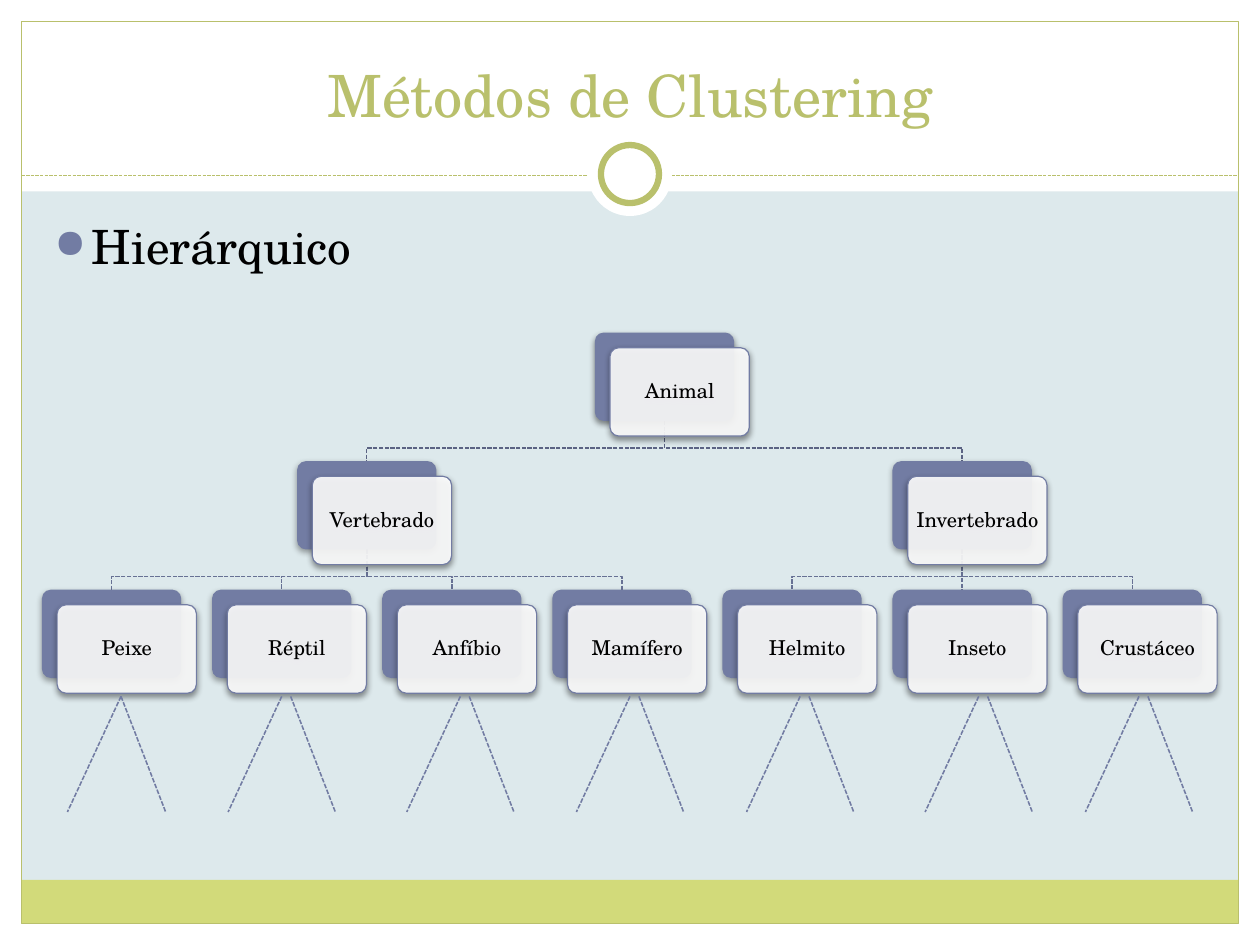
import lxml.etree
import pptx
import pptx.dml.color
import pptx.enum.dml
import pptx.enum.shapes
import pptx.enum.text
import pptx.oxml.ns
import pptx.util

Cm, Pt = pptx.util.Cm, pptx.util.Pt
SHAPE = pptx.enum.shapes.MSO_SHAPE
ALIGN = pptx.enum.text.PP_ALIGN
ANCHOR = pptx.enum.text.MSO_ANCHOR
qn = pptx.oxml.ns.qn

TITLE = "Métodos de Clustering"
TOPIC = "Hierárquico"
ROOT = "Animal"
# Each species: name, fan start (cm), gap between the two fan lines (cm)
BRANCHES = [
    ("Vertebrado", [("Peixe", 2.71, 0), ("Réptil", 6.31, 0.2),
                    ("Anfíbio", 10.31, 0.2), ("Mamífero", 14.11, 0.2)]),
    ("Invertebrado", [("Helmito", 17.92, 0.2), ("Inseto", 21.92, 0.2),
                      ("Crustáceo", 25.51, 0.2)]),
]

FONT = "TeX Gyre Schola"
WHITE, BLACK, BACKGROUND = "FFFFFF", "000000", "DDE9EC"
GREEN, LIME, PURPLE = "B9C06C", "D2DA7A", "727CA3"
LEVEL_LINES = ["5B6383", "677194"]

# Lengths in cm
WIDTH, HEIGHT, MARGIN = 28.22, 21.17, 0.48
CENTER_X, RING_Y, RULE_Y = WIDTH / 2, 3.9, 3.94
CARD_WIDTH, CARD_HEIGHT, CARD_SHIFT = 3.12, 1.98, 0.34
CARD_LEFT, COLUMN_STEP = 0.94, 3.81
TREE_TOP, LEVEL_STEP, ELBOW_RISE = 7.45, 2.88, 0.29
FAN_TOP, FAN_BOTTOM, FAN_LEFT, FAN_RIGHT = 15.6, 18.19, 1.2, 1.0

FRAME = [  # left, top, width, height, fill
    (0, HEIGHT - MARGIN, WIDTH, MARGIN, WHITE),
    (0, 0, WIDTH, 4.29, WHITE),
    (0, 0, MARGIN, HEIGHT, WHITE),
    (WIDTH - MARGIN, 0, MARGIN, HEIGHT, WHITE),
    (MARGIN, 19.71, WIDTH - 2 * MARGIN, 0.97, LIME),
]


def color(hex_code):
    return pptx.dml.color.RGBColor.from_string(hex_code)


def style_line(line, hex_code, width, dashed=False):
    line.color.rgb = color(hex_code)
    line.width = Pt(width)
    if dashed:
        line.dash_style = pptx.enum.dml.MSO_LINE.SQUARE_DOT


def add_shape(slide, kind, box, fill=None, line=None, line_width=0.75):
    shape = slide.shapes.add_shape(kind, *map(Cm, box))
    shape.shadow.inherit = False
    if fill:
        shape.fill.solid()
        shape.fill.fore_color.rgb = color(fill)
    else:
        shape.fill.background()
    if line:
        style_line(shape.line, line, line_width)
    else:
        shape.line.fill.background()
    return shape


def add_circle(slide, diameter, **style):
    """Circle centred on the ring point of the header."""
    box = (CENTER_X - diameter / 2, RING_Y - diameter / 2, diameter, diameter)
    return add_shape(slide, SHAPE.OVAL, box, WHITE, **style)


def add_dashed_line(slide, start, end, hex_code, width=1):
    connector = slide.shapes.add_connector(
        pptx.enum.shapes.MSO_CONNECTOR.STRAIGHT, *map(Cm, start + end))
    style_line(connector.line, hex_code, width, dashed=True)
    lxml.etree.SubElement(connector.element.spPr, qn("a:effectLst"))


def add_branch(slide, parent, child, hex_code):
    """Dashed elbow from the parent card down to the child card."""
    (parent_x, parent_y), (child_x, child_y) = parent, child
    if abs(parent_x - child_x) < 0.01:
        add_dashed_line(slide, parent, child, hex_code, 0.9)
        return
    elbow_y = child_y - ELBOW_RISE
    points = [(parent_x, elbow_y), (child_x, elbow_y), child]
    builder = slide.shapes.build_freeform(Cm(parent_x), Cm(parent_y))
    builder.add_line_segments([(Cm(x), Cm(y)) for x, y in points], close=False)
    branch = builder.convert_to_shape()
    branch.shadow.inherit = False
    branch.fill.background()
    style_line(branch.line, hex_code, 0.9, dashed=True)


def write(shape, text, size, hex_code=BLACK, align=ALIGN.LEFT,
          anchor=ANCHOR.TOP, inset=(0.28, 0.15), line_spacing=None):
    frame = shape.text_frame
    frame.word_wrap = True
    frame.vertical_anchor = anchor
    frame.margin_left = frame.margin_right = Cm(inset[0])
    frame.margin_top = frame.margin_bottom = Cm(inset[1])
    paragraph = frame.paragraphs[0]
    paragraph.alignment = align
    paragraph.line_spacing = line_spacing
    run = paragraph.add_run()
    run.text = text
    run.font.name = FONT
    run.font.size = Pt(size)
    run.font.color.rgb = color(hex_code)
    return paragraph


def add_bullet(paragraph, hex_code):
    paragraph.space_before = Pt(6)
    properties = paragraph._p.get_or_add_pPr()
    properties.set("marL", str(Cm(0.84)))
    properties.set("indent", str(-Cm(0.84)))
    bullet_color = lxml.etree.SubElement(properties, qn("a:buClr"))
    lxml.etree.SubElement(bullet_color, qn("a:srgbClr"), val=hex_code)
    lxml.etree.SubElement(properties, qn("a:buSzPct"), val="85000")
    lxml.etree.SubElement(properties, qn("a:buChar"), char="●")


def add_shadow(shape, opacity):
    effects = shape.element.spPr.find(qn("a:effectLst"))
    shadow = lxml.etree.SubElement(
        effects, qn("a:outerShdw"), blurRad=str(Pt(4)), dist=str(Pt(2)),
        dir="5400000", algn="ctr", rotWithShape="0")
    shade = lxml.etree.SubElement(shadow, qn("a:srgbClr"), val=BLACK)
    lxml.etree.SubElement(shade, qn("a:alpha"), val=str(opacity * 1000))


def add_card(slide, name, column, level):
    """Purple plate with a nearly opaque white label in front."""
    left, top = card_left(column), card_top(level)
    size = (CARD_WIDTH, CARD_HEIGHT)
    plate = add_shape(slide, SHAPE.ROUNDED_RECTANGLE, (left, top) + size, PURPLE)
    label = add_shape(slide, SHAPE.ROUNDED_RECTANGLE,
                      (left + CARD_SHIFT, top + CARD_SHIFT) + size, WHITE, PURPLE)
    for shape, opacity in ((plate, 35 if level else 45), (label, 45)):
        shape.adjustments[0] = 0.1
        add_shadow(shape, opacity)
    label_fill = label.element.spPr.find(qn("a:solidFill")).find(qn("a:srgbClr"))
    lxml.etree.SubElement(label_fill, qn("a:alpha"), val="90000")
    write(label, name, 13, align=ALIGN.CENTER, anchor=ANCHOR.MIDDLE,
          inset=(0.13, 0.13), line_spacing=0.9)


def card_left(column):
    return CARD_LEFT + column * COLUMN_STEP


def card_top(level):
    return TREE_TOP + level * LEVEL_STEP


def place_tree():
    """Return cards (name, column, level) and links (parent, child, level)."""
    species, groups, links = [], [], []
    for group, members in BRANCHES:
        first = len(species)
        group_column = first + (len(members) - 1) / 2
        groups.append((group, group_column, 1))
        for column, (name, *_) in enumerate(members, first):
            species.append((name, column, 2))
            links.append((group_column, column, 1))
    root_column = sum(column for _, column, _ in groups) / len(groups)
    links += [(root_column, column, 0) for _, column, _ in groups]
    return [(ROOT, root_column, 0)] + groups + species, links


def main():
    presentation = pptx.Presentation()
    presentation.slide_width, presentation.slide_height = Cm(WIDTH), Cm(HEIGHT)
    slide = presentation.slides.add_slide(presentation.slide_layouts[6])
    slide.background.fill.solid()
    slide.background.fill.fore_color.rgb = color(BACKGROUND)

    for *box, fill in FRAME:
        add_shape(slide, SHAPE.RECTANGLE, box, fill)
    inner = (MARGIN, MARGIN, WIDTH - 2 * MARGIN, HEIGHT - 2 * MARGIN)
    add_shape(slide, SHAPE.RECTANGLE, inner, line=GREEN)
    add_dashed_line(slide, (MARGIN, RULE_Y), (WIDTH - MARGIN, RULE_Y), GREEN, 0.75)
    add_circle(slide, 1.88)
    add_circle(slide, 1.3, line=GREEN, line_width=4)

    title = slide.shapes.add_textbox(Cm(0.94), Cm(0.71), Cm(26.34), Cm(2.34))
    write(title, TITLE, 37, GREEN, ALIGN.CENTER, ANCHOR.BOTTOM)
    body = slide.shapes.add_textbox(Cm(0.94), Cm(4.72), Cm(26.24), Cm(14.12))
    add_bullet(write(body, TOPIC, 30), PURPLE)

    cards, links = place_tree()
    for parent, child, level in links:
        start = (card_left(parent) + CARD_WIDTH / 2, card_top(level) + CARD_HEIGHT)
        end = (card_left(child) + CARD_WIDTH / 2, card_top(level + 1))
        add_branch(slide, start, end, LEVEL_LINES[level])
    for card in cards:
        add_card(slide, *card)
    for _, members in BRANCHES:
        for _, x, gap in members:
            for start_x, end_x in ((x, x - FAN_LEFT), (x + gap, x + gap + FAN_RIGHT)):
                add_dashed_line(slide, (start_x, FAN_TOP), (end_x, FAN_BOTTOM), PURPLE)

    presentation.save("out.pptx")


if __name__ == "__main__":
    main()
